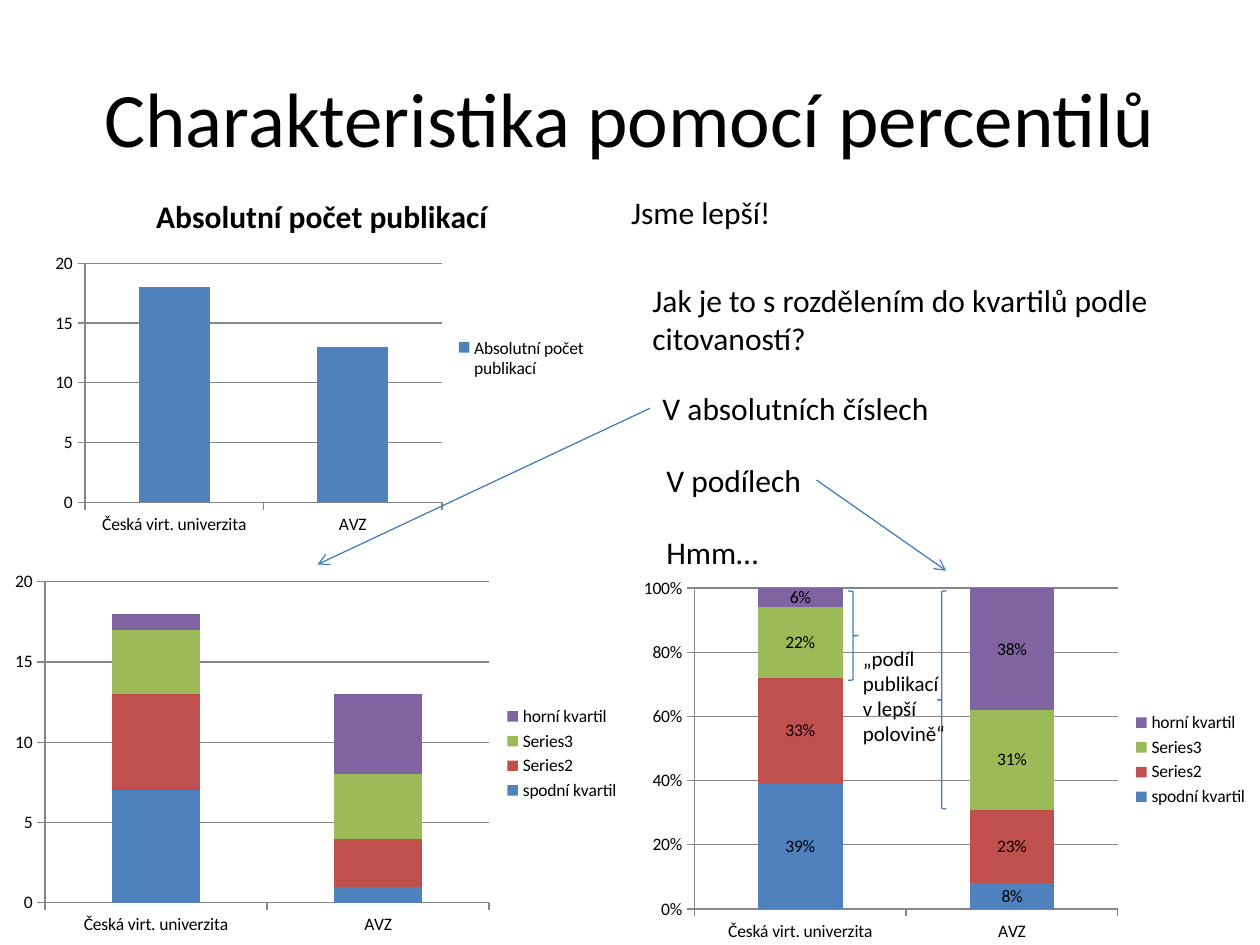
from dataclasses import dataclass
from typing import Any

import pptx
import pptx.chart.data
import pptx.dml.color
import pptx.enum.chart
import pptx.enum.shapes
import pptx.enum.text
import pptx.oxml
import pptx.util
from pptx.util import Inches

FONT = "Calibri"
BLACK = "000000"
ACCENT = "4B7EBC"
GRID = "868686"
DRAWING_NS = "http://schemas.openxmlformats.org/drawingml/2006/main"
UNIVERSITIES = ("Česká virt. univerzita", "AVZ")
QUARTILES = ("spodní kvartil", "Series2", "Series3", "horní kvartil")
SERIES_COLORS = ("4F81BD", "C0504D", "9BBB59", "8064A2")


@dataclass(frozen=True)
class Box:
    left: float
    top: float
    width: float
    height: float

    def lengths(self) -> tuple[int, ...]:
        return tuple(Inches(v) for v in (self.left, self.top, self.width, self.height))


@dataclass(frozen=True)
class ColumnChart:
    box: Box
    names: tuple[str, ...]
    values: tuple[tuple[float, float], ...]
    maximum: float
    step: float
    number_format: str = "General"
    title: str = ""
    labelled: bool = False


@dataclass(frozen=True)
class Note:
    box: Box
    text: str
    size: float = 18


SHARES = ColumnChart(
    Box(5.01, 4.53, 5, 3), QUARTILES,
    ((0.39, 0.08), (0.33, 0.23), (0.22, 0.31), (0.06, 0.38)),
    1, 0.2, "0%", labelled=True,
)
COUNTS = ColumnChart(
    Box(0.02, 4.48, 5, 3), QUARTILES, ((7, 1), (6, 3), (4, 4), (1, 5)), 20, 5
)
TOTALS = ColumnChart(
    Box(0.35, 1.39, 4.41, 2.91), ("Absolutní počet publikací",), ((18, 13),), 20, 5,
    title="Absolutní počet publikací",
)

TITLE = Note(Box(0.5, 0.3, 9, 1.25), "Charakteristika pomocí percentilů", 44)
WE_ARE_BETTER = Note(Box(4.91, 1.48, 1.32, 0.4), "Jsme lepší!")
QUESTION = Note(
    Box(5.08, 2.18, 4.16, 0.71),
    "Jak je to s rozdělením do kvartilů podle\ncitovaností?",
)
IN_COUNTS = Note(Box(5.16, 3.04, 2.34, 0.4), "V absolutních číslech")
IN_SHARES = Note(Box(5.19, 3.61, 1.29, 0.4), "V podílech")
HMM = Note(Box(5.19, 4.18, 0.95, 0.4), "Hmm…")
BETTER_HALF = Note(
    Box(6.75, 5.07, 0.86, 0.91), "„podíl\npublikací\nv lepší\npolovině“", 12
)


def rgb(value: str) -> pptx.dml.color.RGBColor:
    return pptx.dml.color.RGBColor.from_string(value)


def style_line(line: Any, color: str) -> None:
    line.color.rgb = rgb(color)
    line.width = pptx.util.Pt(0.75)


def style_font(font: Any, size: float, bold: bool = False) -> None:
    font.name = FONT
    font.size = pptx.util.Pt(size)
    font.bold = bold
    font.color.rgb = rgb(BLACK)


def add_note(shapes: Any, note: Note) -> Any:
    box = shapes.add_textbox(*note.box.lengths())
    frame = box.text_frame
    frame.text = note.text
    frame.word_wrap = False
    for paragraph in frame.paragraphs:
        for run in paragraph.runs:
            style_font(run.font, note.size)
    return box


def add_title(shapes: Any) -> None:
    frame = add_note(shapes, TITLE).text_frame
    frame.word_wrap = True
    frame.vertical_anchor = pptx.enum.text.MSO_ANCHOR.MIDDLE
    frame.paragraphs[0].alignment = pptx.enum.text.PP_ALIGN.CENTER


def style_axes(chart: Any, column_chart: ColumnChart) -> None:
    for axis in (chart.category_axis, chart.value_axis):
        axis.major_tick_mark = pptx.enum.chart.XL_TICK_MARK.OUTSIDE
        axis.minor_tick_mark = pptx.enum.chart.XL_TICK_MARK.NONE
        style_line(axis.format.line, GRID)
    values = chart.value_axis
    values.minimum_scale = 0
    values.maximum_scale = column_chart.maximum
    values.major_unit = column_chart.step
    values.has_major_gridlines = True
    style_line(values.major_gridlines.format.line, GRID)
    values.tick_labels.number_format = column_chart.number_format
    values.tick_labels.number_format_is_linked = False


def add_column_chart(shapes: Any, column_chart: ColumnChart) -> None:
    data = pptx.chart.data.CategoryChartData(column_chart.number_format)
    data.categories = UNIVERSITIES
    for name, values in zip(column_chart.names, column_chart.values):
        data.add_series(name, values)
    chart = shapes.add_chart(
        pptx.enum.chart.XL_CHART_TYPE.COLUMN_STACKED, *column_chart.box.lengths(), data
    ).chart
    style_font(chart.font, 10)

    chart.has_title = bool(column_chart.title)
    if column_chart.title:
        frame = chart.chart_title.text_frame
        frame.text = column_chart.title
        style_font(frame.paragraphs[0].runs[0].font, 18, bold=True)
        chart.chart_title.include_in_layout = False
    chart.has_legend = True
    chart.legend.position = pptx.enum.chart.XL_LEGEND_POSITION.RIGHT
    chart.legend.include_in_layout = False
    style_axes(chart, column_chart)

    plot = chart.plots[0]
    plot.gap_width = 150
    plot.overlap = 100
    plot.vary_by_categories = False
    for series, color in zip(plot.series, SERIES_COLORS):
        series.format.fill.solid()
        series.format.fill.fore_color.rgb = rgb(color)
        if column_chart.labelled:
            labels = series.data_labels
            labels.show_value = True
            labels.number_format = column_chart.number_format
            labels.number_format_is_linked = False
            style_font(labels.font, 10)


def add_arrow(shapes: Any, source: Any, side: int, end: tuple[float, float]) -> None:
    """Draw an arrow from the middle of one side of source to end."""
    arrow = shapes.add_connector(
        pptx.enum.shapes.MSO_CONNECTOR.STRAIGHT, 0, 0, Inches(end[0]), Inches(end[1])
    )
    arrow.begin_connect(source, side)
    style_line(arrow.line, ACCENT)
    line = arrow.line._get_or_add_ln()
    line.append(pptx.oxml.parse_xml(f'<a:tailEnd xmlns:a="{DRAWING_NS}" type="arrow"/>'))
    line.getparent().append(pptx.oxml.parse_xml(f'<a:effectLst xmlns:a="{DRAWING_NS}"/>'))


def add_brace(shapes: Any, preset: Any, box: Box) -> None:
    brace = shapes.add_shape(preset, *box.lengths())
    brace.shadow.inherit = False
    brace.fill.background()
    style_line(brace.line, ACCENT)


def main() -> None:
    presentation = pptx.Presentation()
    presentation.slide_width = Inches(10)
    presentation.slide_height = Inches(7.5)
    shapes = presentation.slides.add_slide(presentation.slide_layouts[6]).shapes

    add_title(shapes)
    for column_chart in (SHARES, COUNTS, TOTALS):
        add_column_chart(shapes, column_chart)
    for note in (WE_ARE_BETTER, QUESTION, HMM):
        add_note(shapes, note)
    add_arrow(shapes, add_note(shapes, IN_COUNTS), 1, (2.52, 4.48))
    add_arrow(shapes, add_note(shapes, IN_SHARES), 3, (7.51, 4.53))

    better_half = shapes.add_group_shape().shapes
    presets = pptx.enum.shapes.MSO_SHAPE
    add_brace(better_half, presets.RIGHT_BRACE, Box(6.73, 4.69, 0.08, 0.71))
    add_brace(better_half, presets.LEFT_BRACE, Box(7.44, 4.69, 0.07, 1.73))
    add_note(better_half, BETTER_HALF)
    presentation.save("out.pptx")


if __name__ == "__main__":
    main()
